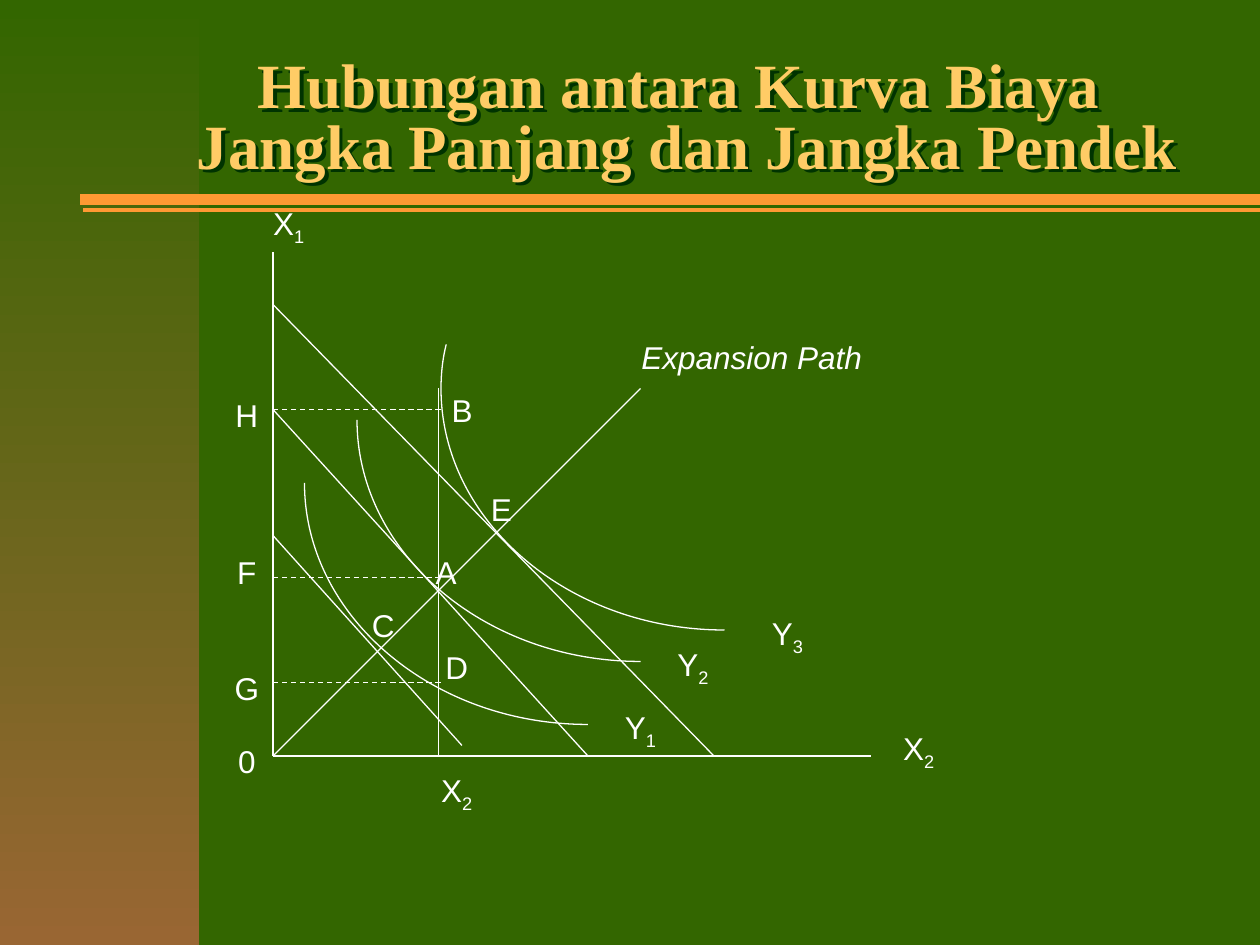
from lxml import etree
from pptx import Presentation
from pptx import util as u
from pptx.dml.color import RGBColor
from pptx.enum import dml, shapes, text
from pptx.oxml.ns import qn

CELL = 1 / 12  # grid of 120 columns by 90 rows on a 10 x 7.5 inch slide
ORIGIN_X, ORIGIN_Y = 26, 72
FIXED_INPUT = 41.75
GREEN, BROWN, ORANGE, GOLD, WHITE = "336600", "996633", "FF9933", "FFCC66", "FFFFFF"
SHADOW = "003300"
ROUNDNESS = 0.55  # share of the radius that makes a Bezier quarter of an ellipse

# start and end of each straight line in the diagram
SOLID_LINES = [
    ((ORIGIN_X, 51), (44, 71)),
    ((ORIGIN_X, 39), (56, ORIGIN_Y)),
    ((ORIGIN_X, 29), (68, ORIGIN_Y)),
    ((ORIGIN_X, ORIGIN_Y), (61, 37)),
    ((ORIGIN_X, 24), (ORIGIN_X, ORIGIN_Y)),
    ((ORIGIN_X, ORIGIN_Y), (83, ORIGIN_Y)),
    ((FIXED_INPUT, 37), (FIXED_INPUT, ORIGIN_Y)),
]
INPUT_LEVELS = [39, 65, 55]

# left column, top row of each quarter ellipse, then any further Bezier points
ISOQUANTS = [
    (34, 40, []),
    (42, 37, [(42, 35.56), (42.16, 34.13), (42.5, 32.8)]),
    (29, 46, []),
]

# text, subscript, left, top, width, height
LABELS = [
    ("X", "1", 23, 18, 9, 7),
    ("X", "2", 83, 68, 9, 7),
    ("X", "2", 39, 72, 9, 7),
    ("Y", "3", 69, 57, 12, 7),
    ("Y", "2", 60, 60, 12, 7),
    ("Y", "1", 55, 66, 12, 7),
    ("A", "", 38, 51, 9, 7),
    ("B", "", 39.5, 35.5, 9, 7),
    ("C", "", 32, 56, 9, 7),
    ("D", "", 39, 60, 9, 7),
    ("E", "", 43.25, 45, 9, 7),
    ("F", "", 19, 51, 9, 7),
    ("G", "", 19, 62, 9, 7),
    ("H", "", 19, 37, 9, 5),
    ("0", "", 19, 69, 9, 7),
]


def grid(*cells):
    return [u.Inches(cell * CELL) for cell in cells]


def color(hex_value):
    return RGBColor.from_string(hex_value)


def set_font(font, name, size, hex_value):
    font.name, font.size = name, u.Pt(size)
    font.color.rgb = color(hex_value)


def add_line(slide, start, end, hex_value=WHITE, width=0.75, dashed=False):
    line = slide.shapes.add_connector(
        shapes.MSO_CONNECTOR.STRAIGHT, *grid(*start, *end))
    line.line.color.rgb = color(hex_value)
    line.line.width = u.Pt(width)
    if dashed:
        line.line.dash_style = dml.MSO_LINE.DASH
    etree.SubElement(line.element.spPr, qn("a:effectLst"))
    return line


def add_isoquant(slide, left, top, tail, radius_x=27, radius_y=23):
    """Draw a quarter ellipse from its lowest point up, then the tail."""
    right, bottom = left + radius_x, top + radius_y
    points = [(right - ROUNDNESS * radius_x, bottom),
              (left, top + ROUNDNESS * radius_y), (left, top), *tail]
    builder = slide.shapes.build_freeform(*grid(right, bottom))
    builder.add_line_segments([grid(*point) for point in points], close=False)
    curve = builder.convert_to_shape()
    bend_segments(curve)
    curve.shadow.inherit = False
    curve.fill.background()
    curve.line.color.rgb = color(WHITE)
    curve.line.width = u.Pt(0.75)


def bend_segments(curve):
    """Turn every three line segments into one Bezier segment."""
    segments = list(curve.element.iter(qn("a:lnTo")))
    for i in range(0, len(segments), 3):
        bezier = etree.Element(qn("a:cubicBezTo"))
        segments[i].addprevious(bezier)
        for segment in segments[i:i + 3]:
            bezier.append(segment[0])
            segment.getparent().remove(segment)


def add_label(slide, caption, subscript, *box, italic=False):
    frame = slide.shapes.add_textbox(*grid(*box)).text_frame
    frame.word_wrap = False
    frame.vertical_anchor = text.MSO_ANCHOR.MIDDLE
    paragraph = frame.paragraphs[0]
    paragraph.alignment = text.PP_ALIGN.CENTER
    set_font(paragraph.font, "Arial", 18, WHITE)
    if italic:
        paragraph.font.italic = True
    paragraph.add_run().text = caption
    if subscript:
        index = paragraph.add_run()
        index.text = subscript
        index.font._element.set("baseline", "-25000")


def add_sidebar(slide):
    sidebar = slide.shapes.add_shape(
        shapes.MSO_SHAPE.RECTANGLE, *grid(0, 0, 19, 90))
    sidebar.shadow.inherit = False
    sidebar.line.fill.background()
    sidebar.fill.gradient()
    sidebar.fill.gradient_angle = 270
    for stop, hex_value in zip(sidebar.fill.gradient_stops, (GREEN, BROWN)):
        stop.color.rgb = color(hex_value)


def add_rule(slide, row, width):
    rule = add_line(slide, (8.12, row), (120, row), ORANGE, width)
    rule.line._get_or_add_ln().set("cap", "sq")


def add_title_shadow(title):
    """Cast a shadow from an unfilled shape, so that it falls from its text."""
    title.fill.background()
    effects = etree.SubElement(title.element.spPr, qn("a:effectLst"))
    shadow = etree.SubElement(effects, qn("a:outerShdw"),
                              dist="38100", dir="2700000", algn="tl")
    etree.SubElement(shadow, qn("a:srgbClr"), val=SHADOW)


def set_title(slide, caption):
    title = slide.shapes.title
    title.left, title.top, title.width, title.height = map(
        u.Inches, (0.9, 0.28, 9.1, 1.21))
    title.element.getparent().append(title.element)  # in front of the sidebar
    add_title_shadow(title)
    frame = title.text_frame
    frame.text = caption
    frame.word_wrap = True
    frame.vertical_anchor = text.MSO_ANCHOR.BOTTOM
    paragraph = frame.paragraphs[0]
    paragraph.alignment = text.PP_ALIGN.CENTER
    paragraph.line_spacing = 0.8
    set_font(paragraph.font, "Times New Roman", 36, GOLD)
    paragraph.font.bold = True


def main():
    deck = Presentation()
    deck.slide_width, deck.slide_height = grid(120, 90)
    slide = deck.slides.add_slide(deck.slide_layouts[5])
    slide.background.fill.solid()
    slide.background.fill.fore_color.rgb = color(GREEN)

    add_sidebar(slide)
    add_rule(slide, 20, 2)
    add_rule(slide, 19, 6)
    set_title(slide, "Hubungan antara Kurva Biaya \vJangka Panjang dan Jangka Pendek")

    for start, end in SOLID_LINES:
        add_line(slide, start, end)
    for row in INPUT_LEVELS:
        add_line(slide, (ORIGIN_X, row), (42, row), dashed=True)
    for isoquant in ISOQUANTS:
        add_isoquant(slide, *isoquant)
    for label in LABELS:
        add_label(slide, *label)
    add_label(slide, "Expansion Path ", "", 52, 30, 40, 8, italic=True)

    deck.save("out.pptx")


if __name__ == "__main__":
    main()
